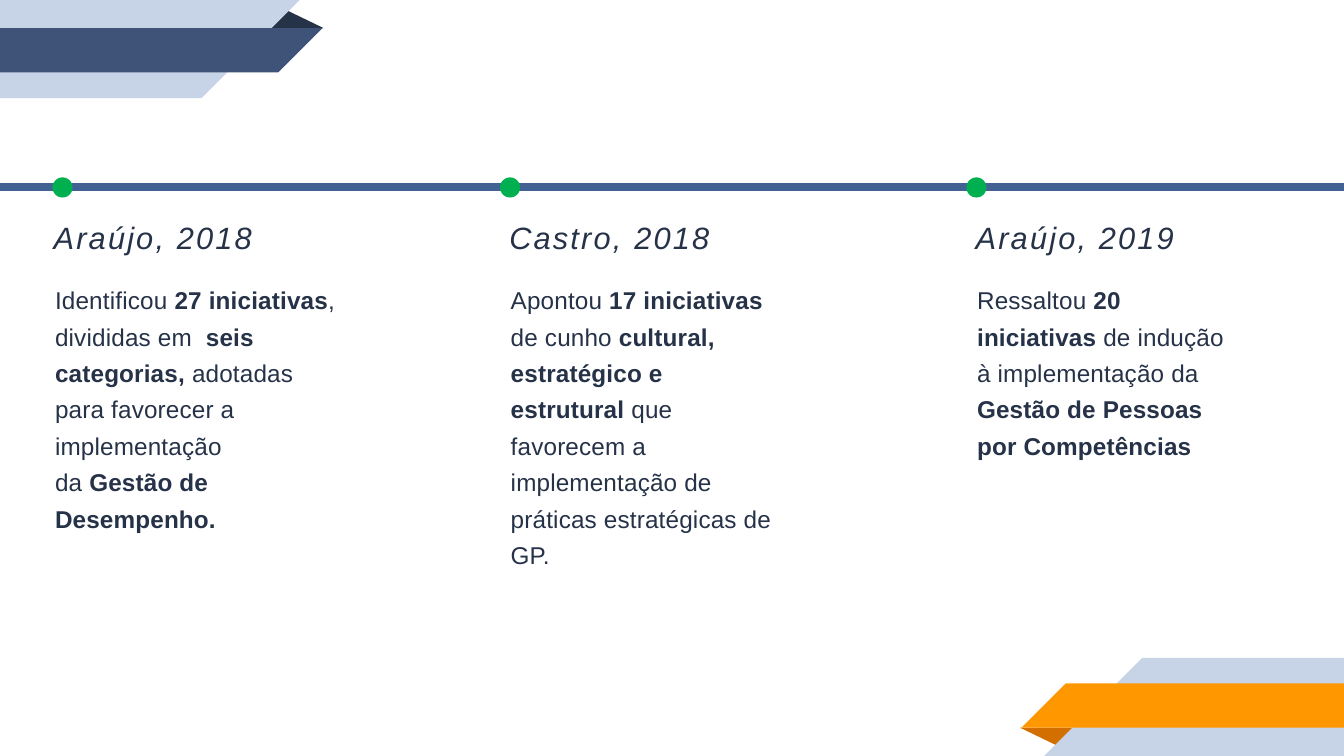
from pptx import Presentation
from pptx.dml.color import RGBColor
from pptx.enum.shapes import MSO_SHAPE
from pptx.enum.text import MSO_AUTO_SIZE
from pptx.util import Inches, Pt

WIDTH = 10
HEIGHT = WIDTH * 9 / 16
NAVY, PALE, GREEN = "263248", "C7D3E6", "00B050"
NBSP = chr(160)


def color(hex_code):
    return RGBColor.from_string(hex_code)


class TimelineSlide:
    """Draws styled elements on the current slide."""

    font = "Arial"
    ink = NAVY

    def __init__(self, slide):
        self.slide = slide

    def paint(self, shape, fill):
        shape.shadow.inherit = False
        shape.fill.solid()
        shape.fill.fore_color.rgb = color(fill)
        shape.line.fill.background()
        return shape

    def preset(self, kind, left, top, width, height, fill):
        box = [Inches(value) for value in (left, top, width, height)]
        return self.paint(self.slide.shapes.add_shape(kind, *box), fill)

    def polygon(self, points, fill):
        start, *rest = [(Inches(x), Inches(y)) for x, y in points]
        builder = self.slide.shapes.build_freeform(*start)
        builder.add_line_segments(rest, close=True)
        return self.paint(builder.convert_to_shape(), fill)

    def ribbon(self, fold, band, turned=False):
        layers = [
            ([(1.98, 0.21), (2.12, 0.07), (2.41, 0.21)], fold),
            ([(0, 0), (2.23, 0), (1.5, 0.73), (0, 0.73)], PALE),
            ([(0, 0.21), (2.4, 0.21), (2.07, 0.54), (0, 0.54)], band),
        ]
        for points, fill in layers:
            if turned:
                points = [(WIDTH - x, HEIGHT - y) for x, y in points]
            self.polygon(points, fill)

    def text(self, left, top, width, height, runs, size, leading, spacing, italic=False):
        box = self.slide.shapes.add_textbox(
            Inches(left), Inches(top), Inches(width), Inches(height))
        frame = box.text_frame
        frame.word_wrap = True
        frame.auto_size = MSO_AUTO_SIZE.SHAPE_TO_FIT_TEXT
        frame.margin_left = frame.margin_right = 0
        frame.margin_top = frame.margin_bottom = 0
        paragraph = frame.paragraphs[0]
        paragraph.line_spacing = Pt(leading)
        paragraph.font.name = self.font
        paragraph.font.size = Pt(size)
        paragraph.font.italic = italic
        paragraph.font.color.rgb = color(self.ink)
        for index, words in enumerate(runs):
            run = paragraph.add_run()
            run.text = words
            run.font.bold = index % 2 == 1
            run._r.get_or_add_rPr().set("spc", str(round(spacing * 100)))

    def study(self, left, width, height, heading, findings):
        self.text(left, 1.58, width, 0.29, [heading], 16.5, 23.1, 1.2, italic=True)
        self.text(left + 0.01, 2.07, width, height, findings, 13, 19.5, 0.1)


STUDIES = [
    (0.4, 2.13, 1.93, "Araújo, 2018",
     [f"Identificou{NBSP}", "27 iniciativas", ", divididas em  ", "seis categorias, ",
      f"adotadas para favorecer a implementação da{NBSP}", "Gestão de Desempenho."]),
    (3.79, 1.98, 2.22, "Castro, 2018",
     ["Apontou ", "17 iniciativas ", f"de cunho{NBSP}",
      "cultural, estratégico e estrutural",
      f"{NBSP}que favorecem a implementação de práticas estratégicas de GP."]),
    (7.26, 1.98, 1.37, "Araújo, 2019",
     ["Ressaltou", f"{NBSP}20 iniciativas", " de indução à implementação da ",
      "Gestão de Pessoas por Competências"]),
]
MILESTONES = [0.39, 3.72, 7.19]


def main():
    deck = Presentation()
    deck.slide_width, deck.slide_height = Inches(WIDTH), Inches(HEIGHT)
    timeline = TimelineSlide(deck.slides.add_slide(deck.slide_layouts[6]))

    timeline.ribbon(NAVY, "3F5378")
    timeline.ribbon("D26F00", "FF9800", turned=True)

    axis = timeline.preset(MSO_SHAPE.RECTANGLE, 0, 1.37, WIDTH, 0.05, "426294")
    axis.line.color.rgb = color("426294")
    axis.line.width = Pt(0.75)

    for milestone, study in zip(MILESTONES, STUDIES):
        timeline.preset(MSO_SHAPE.OVAL, milestone, 1.32, 0.15, 0.15, GREEN)
        timeline.study(*study)

    deck.save("out.pptx")


if __name__ == "__main__":
    main()
